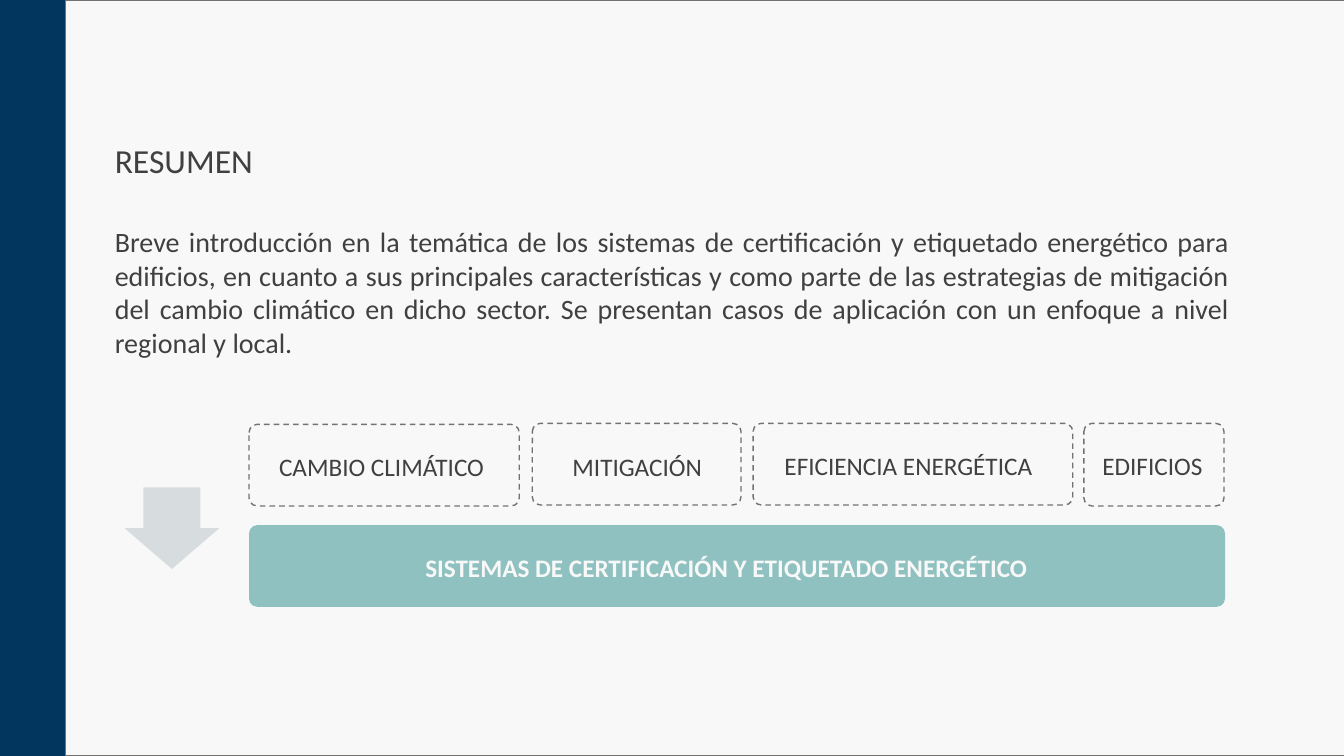
from pptx import Presentation
from pptx.dml.color import RGBColor
from pptx.enum import dml, shapes, text
from pptx.util import Inches, Pt

NAVY, PAPER, TEAL, SILVER = "03365E", "F8F8F8", "8EC1C0", "D7DDDF"
OUTLINE, INK = "767171", "404040"

HEADING = "RESUMEN"
SUMMARY = (
    "Breve introducción en la temática de los sistemas de certificación y "
    "etiquetado energético para edificios, en cuanto a sus principales "
    "características y como parte de las estrategias de mitigación del cambio "
    "climático en dicho sector. Se presentan casos de aplicación con un enfoque "
    "a nivel regional y local."
)
CONCLUSION = "SISTEMAS DE CERTIFICACIÓN Y ETIQUETADO ENERGÉTICO"
# topic, box (left, top, width, height), label (left, top, width)
TOPICS = [
    ("CAMBIO CLIMÁTICO", (2.47, 4.21, 2.68, 0.81), (2.63, 4.43, 2.31)),
    ("MITIGACIÓN", (5.28, 4.2, 2.07, 0.81), (5.36, 4.43, 1.92)),
    ("EFICIENCIA ENERGÉTICA", (7.47, 4.2, 3.17, 0.81), (7.65, 4.42, 2.72)),
    ("EDIFICIOS", (10.75, 4.2, 1.39, 0.82), (10.83, 4.42, 1.2)),
]
LABEL_HEIGHT = 0.4

RECT = shapes.MSO_SHAPE.RECTANGLE
ROUNDED = shapes.MSO_SHAPE.ROUNDED_RECTANGLE
ARROW = shapes.MSO_SHAPE.RIGHT_ARROW
LEFT, CENTER, JUSTIFY = text.PP_ALIGN.LEFT, text.PP_ALIGN.CENTER, text.PP_ALIGN.JUSTIFY


def color(hex_code):
    return RGBColor.from_string(hex_code)


def add_block(slide, kind, place, fill, line=None, dashed=False, adjust=()):
    block = slide.shapes.add_shape(kind, *map(Inches, place))
    block.shadow.inherit = False
    block.fill.solid()
    block.fill.fore_color.rgb = color(fill)
    if line:
        block.line.color.rgb = color(line)
        block.line.width = Pt(1)
        if dashed:
            block.line.dash_style = dml.MSO_LINE.DASH
    else:
        block.line.fill.background()
    for index, value in enumerate(adjust):
        block.adjustments[index] = value
    return block


def add_text(slide, words, place, size, align=CENTER, ink=INK, bold=False):
    frame = slide.shapes.add_textbox(*map(Inches, place)).text_frame
    frame.word_wrap = True
    frame.auto_size = text.MSO_AUTO_SIZE.SHAPE_TO_FIT_TEXT
    frame.text = words
    paragraph = frame.paragraphs[0]
    paragraph.alignment = align
    font = paragraph.runs[0].font
    font.name, font.size, font.bold = "Calibri", Pt(size), bold
    font.color.rgb = color(ink)


def main():
    deck = Presentation()
    deck.slide_width, deck.slide_height = Inches(13.33), Inches(7.5)
    slide = deck.slides.add_slide(deck.slide_layouts[6])

    add_block(slide, RECT, (0, 0, 6.72, 7.5), NAVY)
    add_block(slide, RECT, (0.65, 0, 12.71, 7.5), PAPER, OUTLINE)

    add_block(slide, ROUNDED, (2.47, 5.21, 9.68, 0.81), TEAL, adjust=[0.1])
    add_text(slide, CONCLUSION, (3.04, 5.43, 8.33, LABEL_HEIGHT), 18, ink=PAPER, bold=True)
    add_text(slide, SUMMARY, (1.04, 2.18, 11.25, 1.45), 20, JUSTIFY)
    add_text(slide, HEADING, (1.04, 1.34, 1.84, 0.5), 24, LEFT)

    for topic, box, label in TOPICS:
        add_block(slide, ROUNDED, box, PAPER, OUTLINE, dashed=True, adjust=[0.1])
        add_text(slide, topic, (*label, LABEL_HEIGHT), 18)

    arrow = add_block(slide, ARROW, (1.3, 4.77, 0.81, 0.94), SILVER, adjust=[0.6, 0.5])
    arrow.rotation = 90

    deck.save("out.pptx")


if __name__ == "__main__":
    main()
